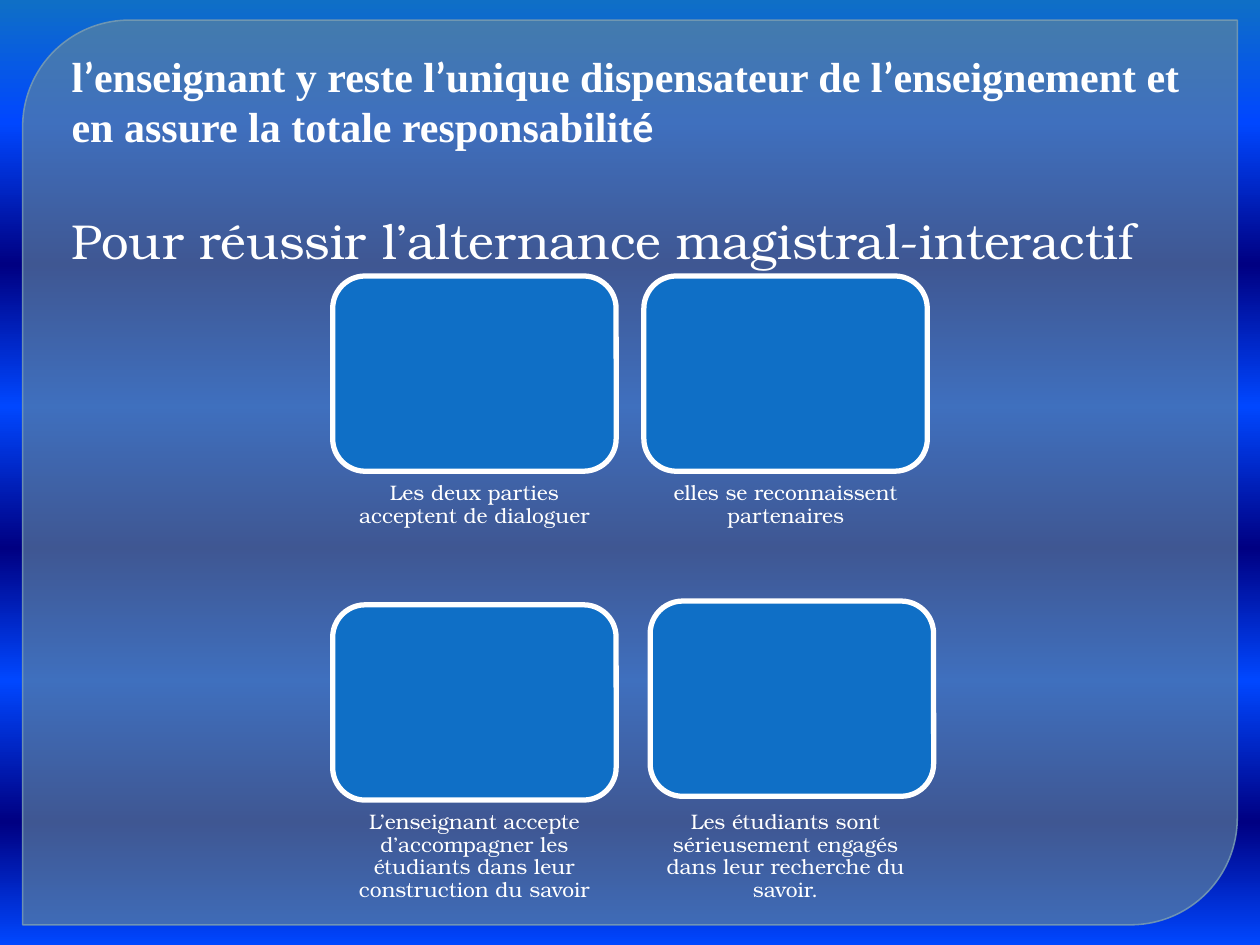
from lxml.etree import SubElement
from pptx import Presentation
from pptx.dml.color import RGBColor
from pptx.enum.shapes import MSO_SHAPE
from pptx.enum.text import MSO_ANCHOR, PP_ALIGN
from pptx.oxml.ns import qn
from pptx.util import Inches, Pt

COLORS = {
    "white": "FFFFFF", "tile": "0F6FC6", "bright": "0047FF", "navy": "000082",
    "panel": "61869C", "edge": "779BB2",
}
BACKDROP = [
    (0, "tile"), (13, "bright"), (28, "navy"), (43, "bright"),
    (58, "navy"), (72, "bright"), (87, "navy"), (100, "bright"),
]
SERIF, SANS, BODY = "Times New Roman", "Calibri", "TeX Gyre Bonum"
STATEMENT = (
    "l’enseignant y reste l’unique dispensateur de l’enseignement "
    "et en assure la totale responsabilit"
)
SUBTITLE = "Pour réussir l’alternance magistral-interactif"
TILES = [
    (2.64, 2.19, 2.64, 3.74, "Les deux parties acceptent de dialoguer"),
    (5.11, 2.19, 5.11, 3.74, "elles se reconnaissent partenaires"),
    (2.64, 4.8, 2.64, 6.35,
     "L’enseignant accepte d’accompagner les étudiants dans leur construction du savoir"),
    (5.16, 4.77, 5.11, 6.35,
     "Les étudiants sont sérieusement engagés dans leur recherche du savoir."),
]


def apply(target, values):
    """Set every attribute named in values on target."""
    for name, value in values.items():
        setattr(target, name, value)


class SlideBuilder:
    """Holds the style and the current slide."""

    def __init__(self, presentation):
        self.slide = presentation.slides.add_slide(presentation.slide_layouts[6])

    def backdrop(self, stops):
        """Fill the background with a top-to-bottom gradient."""
        fill = self.slide.background.fill
        fill.gradient()
        fill.gradient_angle = 270
        stop_list = next(self.slide.element.iter(qn("a:gsLst")))
        for stop in list(stop_list):
            stop_list.remove(stop)
        for position, color in stops:
            stop = SubElement(stop_list, qn("a:gs"), pos=str(position * 1000))
            SubElement(stop, qn("a:srgbClr"), val=COLORS[color])

    def box(self, kind, bounds, fill, line, width, opacity=None, adjustments=()):
        """Add a filled and outlined preset shape."""
        shape = self.slide.shapes.add_shape(kind, *map(Inches, bounds))
        shape.shadow.inherit = False
        for index, value in enumerate(adjustments):
            shape.adjustments[index] = value
        shape.fill.solid()
        shape.fill.fore_color.rgb = RGBColor.from_string(COLORS[fill])
        shape.line.color.rgb = RGBColor.from_string(COLORS[line])
        shape.line.width = Pt(width)
        if opacity:
            fill_opacity, line_opacity = opacity
            colors = shape.element.spPr.iter(qn("a:srgbClr"))
            for color, percent in zip(list(colors), (fill_opacity, line_opacity)):
                SubElement(color, qn("a:alpha"), val=str(percent * 1000))

    def text(self, bounds, paragraphs, frame_format):
        """Add a text box of (paragraph format, font format, runs) entries."""
        frame = self.slide.shapes.add_textbox(*map(Inches, bounds)).text_frame
        apply(frame, {"word_wrap": True, "vertical_anchor": MSO_ANCHOR.TOP, **frame_format})
        for index, (paragraph_format, font_format, runs) in enumerate(paragraphs):
            paragraph = frame.add_paragraph() if index else frame.paragraphs[0]
            apply(paragraph, paragraph_format)
            for content, typeface in runs:
                run = paragraph.add_run()
                run.text = content
                apply(run.font, {**font_format, "name": typeface})
                run.font.color.rgb = RGBColor.from_string(COLORS["white"])

    def heading(self, bounds, statement, subtitle):
        """Add the bold statement, its apostrophes in the sans face, and the subtitle."""
        runs = []
        for index, part in enumerate(statement.split("’")):
            if index:
                runs.append(("’", SANS))
            runs.append((part, SERIF))
        runs.append(("é", SANS))
        self.text(bounds, [
            ({}, {"size": Pt(24), "bold": True}, runs),
            ({"alignment": PP_ALIGN.JUSTIFY, "space_before": Pt(34)},
             {"size": Pt(28)}, [(subtitle, BODY)]),
        ], {"margin_top": Inches(0.09)})

    def tile(self, left, top, caption_left, caption_top, caption):
        """Add a rounded tile with its caption."""
        self.box(MSO_SHAPE.ROUNDED_RECTANGLE, (left, top, 2.25, 1.55), "tile", "white", 3)
        margins = {f"margin_{side}": Inches(0.09) for side in ("left", "top", "right")}
        self.text((caption_left, caption_top, 2.25, 0.84), [
            ({"alignment": PP_ALIGN.CENTER, "line_spacing": 0.9},
             {"size": Pt(12)}, [(caption, BODY)]),
        ], {**margins, "margin_bottom": 0})


def main():
    """Build and save the slide."""
    presentation = Presentation()
    apply(presentation, {"slide_width": Inches(10), "slide_height": Inches(7.5)})
    builder = SlideBuilder(presentation)
    builder.backdrop(BACKDROP)
    builder.box(MSO_SHAPE.ROUND_2_DIAG_RECTANGLE, (0.18, 0.16, 9.64, 7.18),
                "panel", "edge", 0.87, opacity=(65, 88), adjustments=(0.118, 0))
    builder.heading((0.47, 0.31, 9.22, 2.79), STATEMENT, SUBTITLE)
    for tile in TILES:
        builder.tile(*tile)
    presentation.save("out.pptx")


if __name__ == "__main__":
    main()
